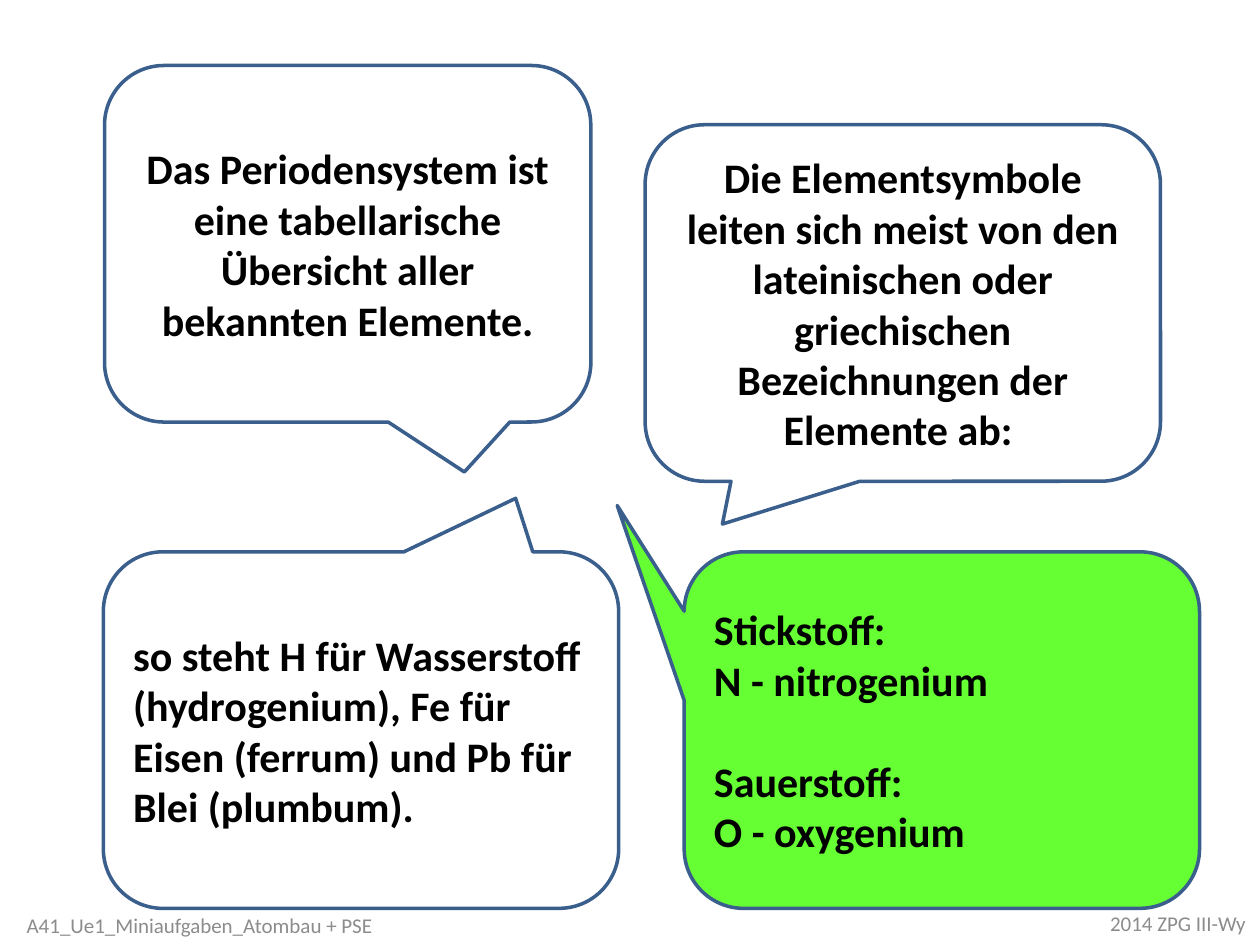
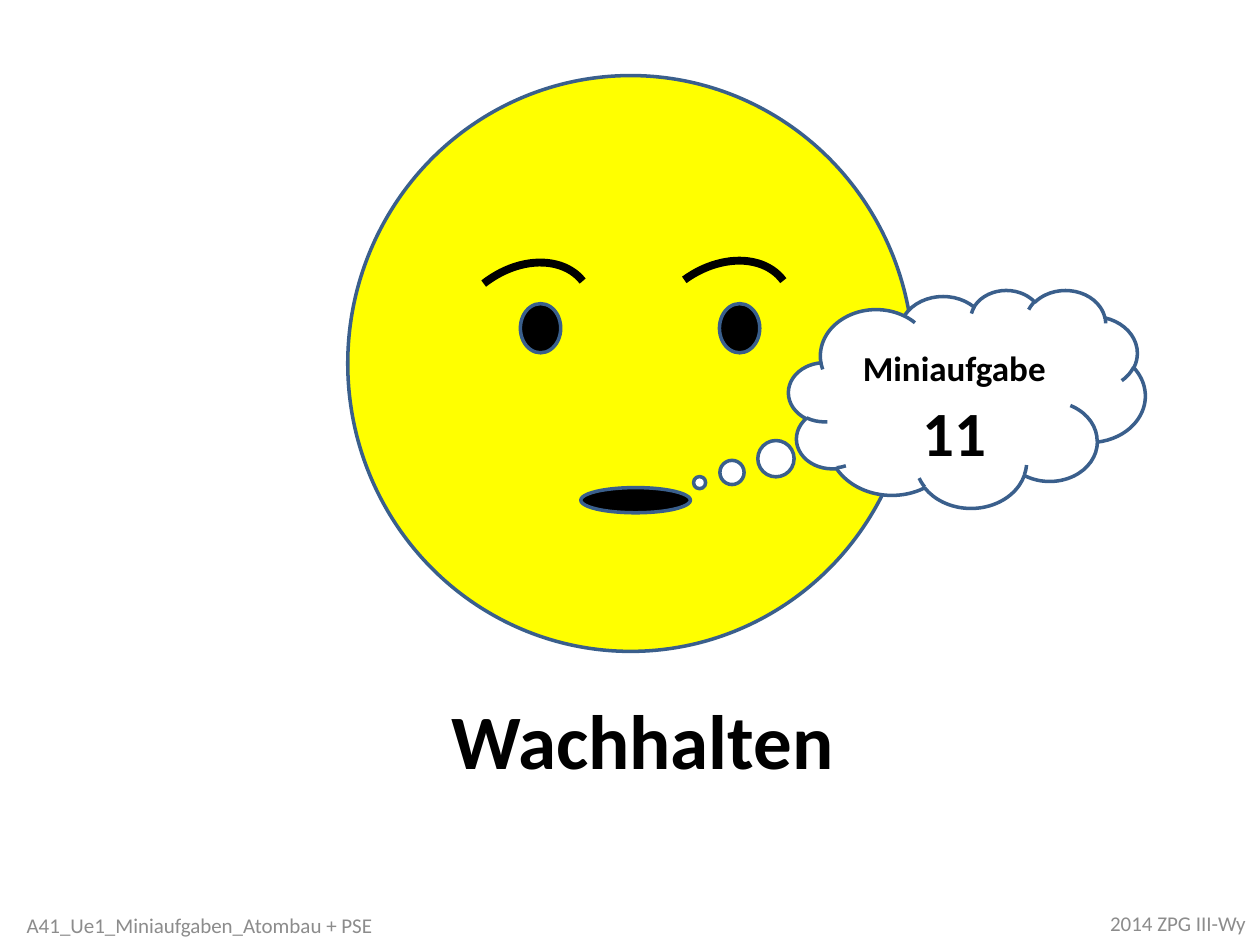
from pptx import Presentation
from pptx.dml.color import RGBColor
from pptx.enum.shapes import MSO_SHAPE
from pptx.enum.text import MSO_ANCHOR, PP_ALIGN
from pptx.util import Inches, Pt

FONT = "Calibri"
BLACK = RGBColor(0x00, 0x00, 0x00)
WHITE = RGBColor(0xFF, 0xFF, 0xFF)
GREY = RGBColor(0x8C, 0x8C, 0x8C)
BLUE = RGBColor(0x3A, 0x5F, 0x8C)
GREEN = RGBColor(0x66, 0xFF, 0x33)
YELLOW = RGBColor(0xFF, 0xFF, 0x00)

FOOTERS = [
    ("2014 ZPG III-Wy", (8.7, 7.13, 1.3, 0.4)),
    ("A41_Ue1_Miniaufgaben_Atombau + PSE", (0, 7.14, 3.17, 0.4)),
]


def add_figure(s, kind, at, fill=None, line=BLUE, width=2, adj=()):
    sp = s.shapes.add_shape(kind, *map(Inches, at))
    sp.shadow.inherit = False
    if fill is None:
        sp.fill.background()
    else:
        sp.fill.solid()
        sp.fill.fore_color.rgb = fill
    sp.line.color.rgb = line
    sp.line.width = Pt(width)
    for i, value in enumerate(adj):
        sp.adjustments[i] = value
    return sp


def write(sp, paragraphs, align=PP_ALIGN.CENTER, anchor=MSO_ANCHOR.MIDDLE,
          color=BLACK, bold=True):
    """Fill a shape with paragraphs, each a list of (text, size) runs."""
    tf = sp.text_frame
    tf.word_wrap = True
    tf.vertical_anchor = anchor
    for i, runs in enumerate(paragraphs):
        p = tf.add_paragraph() if i else tf.paragraphs[0]
        p.alignment = align
        for text, size in runs:
            r = p.add_run()
            r.text = text
            r.font.name = FONT
            r.font.size = Pt(size)
            r.font.bold = bold
            r.font.color.rgb = color
    return tf


prs = Presentation()
prs.slide_width, prs.slide_height = Inches(10), Inches(7.5)
facts, title = [prs.slides.add_slide(prs.slide_layouts[6]) for _ in range(2)]

# Slide 1: four speech bubbles (position, tail tip, fill, alignment, lines)
bubbles = [
    ((5.12, 0.99, 4.09, 2.83), (-0.35, 0.62), WHITE, PP_ALIGN.CENTER,
     ["Die Elementsymbole leiten sich meist von den lateinischen oder "
      "griechischen Bezeichnungen der Elemente ab: "]),
    ((0.83, 0.52, 3.86, 2.83), (0.24, 0.64), WHITE, PP_ALIGN.CENTER,
     ["Das Periodensystem ist eine tabellarische Übersicht aller "
      "bekannten Elemente."]),
    ((0.82, 4.38, 4.09, 2.83), (0.3, -0.65), WHITE, PP_ALIGN.LEFT,
     ["so steht H für Wasserstoff (hydrogenium), Fe für Eisen (ferrum) "
      "und Pb für Blei (plumbum)."]),
    ((5.43, 4.38, 4.09, 2.83), (-0.63, -0.63), GREEN, PP_ALIGN.LEFT,
     ["Stickstoff:", "N - nitrogenium", "Sauerstoff:", "O - oxygenium"]),
]
for at, tip, fill, align, lines in bubbles:
    sp = add_figure(facts, MSO_SHAPE.ROUNDED_RECTANGULAR_CALLOUT, at, fill,
                    adj=(*tip, 0.167))
    tf = write(sp, [[(line, 24)] for line in lines], align)
    for p in tf.paragraphs[2::2]:
        p.space_before = Pt(29)  # one empty line between the elements

# Slide 2: thinking face with the task number
add_figure(title, MSO_SHAPE.OVAL, (2.76, 0.6, 4.49, 4.57), YELLOW)
add_figure(title, MSO_SHAPE.OVAL, (4.61, 3.87, 0.87, 0.2), BLACK)
for eye_x, brow_x, brow_y, angle in [(4.13, 3.5, 2.15, 321.8),
                                     (5.71, 5.08, 2.13, 323.7)]:
    add_figure(title, MSO_SHAPE.OVAL, (eye_x, 2.41, 0.32, 0.39), BLACK)
    brow = add_figure(title, MSO_SHAPE.ARC, (brow_x, brow_y, 1.26, 0.94),
                      line=BLACK, width=4.5)
    brow.rotation = angle
cloud = add_figure(title, MSO_SHAPE.CLOUD_CALLOUT, (6.26, 2.3, 2.83, 1.73),
                   WHITE, adj=(-0.75, 0.385))
write(cloud, [[("Miniaufgabe", 20), (" 11", 36)]])
caption = title.shapes.add_textbox(*map(Inches, (0.85, 5.45, 8.5, 1.61)))
write(caption, [[("Wachhalten", 44)]], anchor=MSO_ANCHOR.TOP)

for s in (facts, title):
    for text, at in FOOTERS:
        footer = s.shapes.add_textbox(*map(Inches, at))
        write(footer, [[(text, 12)]], color=GREY, bold=False)

prs.save("out.pptx")
